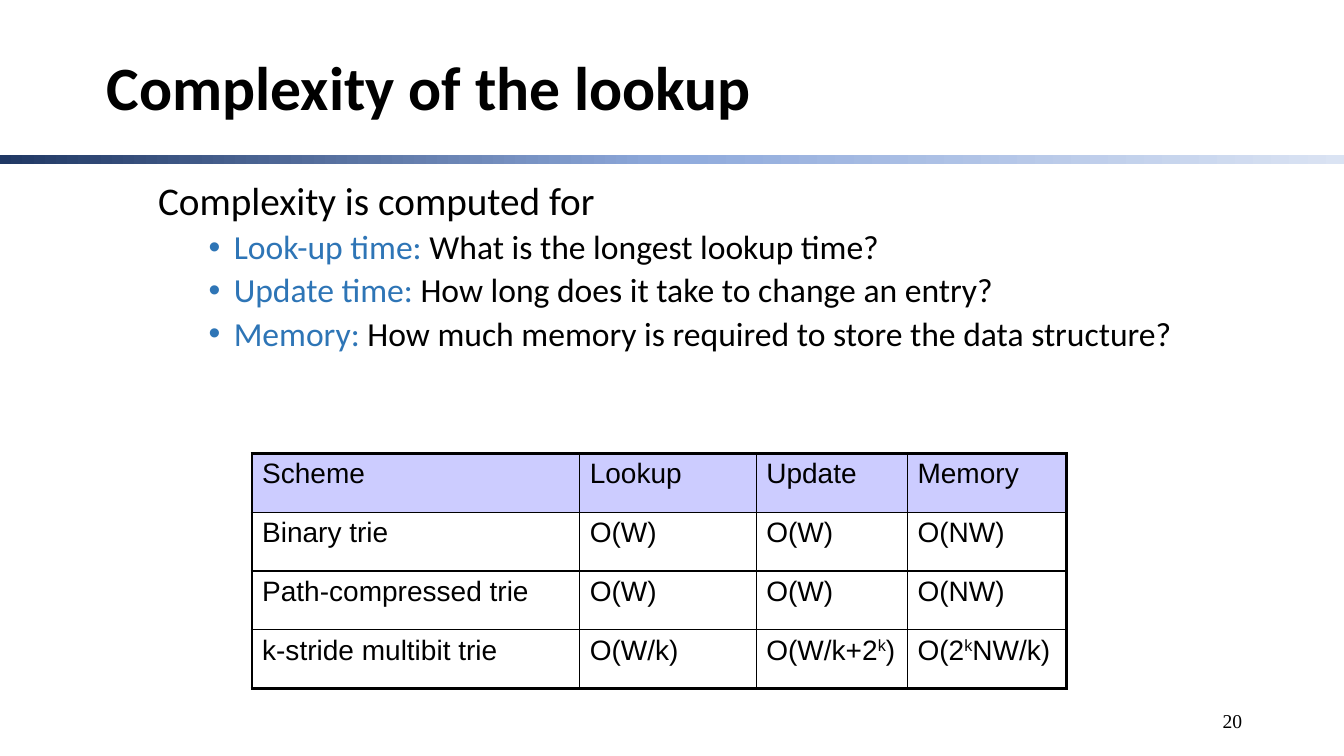
from lxml import etree
from pptx import Presentation
from pptx.dml.color import RGBColor
from pptx.enum.shapes import MSO_SHAPE
from pptx.enum.text import MSO_ANCHOR, MSO_AUTO_SIZE, PP_ALIGN
from pptx.oxml.ns import qn
from pptx.util import Inches, Pt

RECTANGLE = MSO_SHAPE.RECTANGLE
TOP, MIDDLE = MSO_ANCHOR.TOP, MSO_ANCHOR.MIDDLE
LEFT, RIGHT = PP_ALIGN.LEFT, PP_ALIGN.RIGHT
NO_AUTOFIT = MSO_AUTO_SIZE.NONE

TITLE = "Complexity of the lookup"
INTRO = "Complexity is computed for"
QUESTIONS = [
    ("Look-up time: ", "What is the longest lookup time?"),
    ("Update time: ", "How long does it take to change an entry?"),
    ("Memory: ", "How much memory is required to store the data structure?"),
]
SCHEMES = [
    ["Scheme", "Lookup", "Update", "Memory"],
    ["Binary trie", "O(W)", "O(W)", "O(NW)"],
    ["Path-compressed trie", "O(W)", "O(W)", "O(NW)"],
    ["k-stride multibit trie", "O(W/k)", "O(W/k+2^k^)", "O(2^k^NW/k)"],
]
COLUMN_WIDTHS = [3.25, 1.75, 1.5, 1.58]
SLIDE_NUMBER = "20"

SLIDE_SIZE = (13.33, 7.5)
BAND_BOX = (0, 1.54, 13.33, 0.09)
TITLE_BOX = (0.96, 0.4, 9.83, 1)
BODY_BOX = (1.47, 1.75, 10.45, 2.75)
TABLE_BOX = (2.5, 4.5, sum(COLUMN_WIDTHS), 2.33)
NUMBER_BOX = (9.42, 6.95, 3, 0.4)


class Theme:
    black = "000000"
    label = "2E75B6"
    header = "CCCCFF"
    band = [(0, "203864"), (50, "8FAADC"), (100, "DAE3F3")]
    inner_line, outer_line = 1, 2.25
    title = {"name": "Calibri", "size": Pt(44), "bold": True}
    intro = {"name": "Calibri", "size": Pt(28)}
    question = {"name": "Calibri", "size": Pt(24)}
    cell = {"name": "Arial", "size": Pt(20)}
    number = {"name": "Times New Roman", "size": Pt(14)}


def set_attributes(target, values):
    for name, value in values.items():
        setattr(target, name, value)


def to_inches(box):
    return [Inches(length) for length in box]


def add_run(paragraph, text, font, color=Theme.black):
    run = paragraph.add_run()
    run.text = text
    set_attributes(run.font, font)
    run.font.color.rgb = RGBColor.from_string(color)
    return run


def format_frame(frame, anchor):
    set_attributes(frame, {"word_wrap": True, "auto_size": NO_AUTOFIT, "vertical_anchor": anchor})


def add_text_box(slide, box, anchor):
    frame = slide.shapes.add_textbox(*to_inches(box)).text_frame
    format_frame(frame, anchor)
    return frame


def add_band(slide):
    band = slide.shapes.add_shape(RECTANGLE, *to_inches(BAND_BOX))
    band.shadow.inherit = False
    band.line.fill.background()
    band.fill.gradient()
    band.fill.gradient_angle = 0
    stops = band.element.spPr.find(".//" + qn("a:gsLst"))
    for stop in list(stops):
        stops.remove(stop)
    for position, color in Theme.band:
        stop = etree.SubElement(stops, qn("a:gs"), pos=str(position * 1000))
        etree.SubElement(stop, qn("a:srgbClr"), val=color)


def add_title(slide):
    title = slide.shapes.title
    set_attributes(title, dict(zip(("left", "top", "width", "height"), to_inches(TITLE_BOX))))
    format_frame(title.text_frame, MIDDLE)
    paragraph = title.text_frame.paragraphs[0]
    set_attributes(paragraph, {"alignment": LEFT, "line_spacing": 0.9})
    add_run(paragraph, TITLE, Theme.title)


def add_bullet(paragraph):
    properties = paragraph._p.get_or_add_pPr()
    properties.set("marL", str(Inches(0.75)))
    properties.set("indent", str(Inches(-0.25)))
    etree.SubElement(properties, qn("a:buFont"), typeface="Arial")
    etree.SubElement(properties, qn("a:buChar"), char="•")


def add_body(slide):
    frame = add_text_box(slide, BODY_BOX, TOP)
    paragraph = frame.paragraphs[0]
    set_attributes(paragraph, {"line_spacing": 0.9, "space_before": Pt(10)})
    add_run(paragraph, INTRO, Theme.intro)
    for label, question in QUESTIONS:
        paragraph = frame.add_paragraph()
        set_attributes(paragraph, {"level": 1, "line_spacing": 0.9, "space_before": Pt(5)})
        add_bullet(paragraph)
        add_run(paragraph, label, Theme.question, Theme.label)
        add_run(paragraph, question, Theme.question)


def add_borders(cell, outer_sides):
    properties = cell._tc.get_or_add_tcPr()
    for side, is_outer in outer_sides.items():
        width = Theme.outer_line if is_outer else Theme.inner_line
        line = etree.SubElement(properties, qn("a:ln" + side), w=str(Pt(width)))
        fill = etree.SubElement(line, qn("a:solidFill"))
        etree.SubElement(fill, qn("a:srgbClr"), val=Theme.black)


def add_scheme_table(slide):
    last_row, last_column = len(SCHEMES) - 1, len(COLUMN_WIDTHS) - 1
    frame = slide.shapes.add_table(len(SCHEMES), len(COLUMN_WIDTHS), *to_inches(TABLE_BOX))
    table = frame.table
    set_attributes(table, {"first_row": False, "horz_banding": False})
    for column, width in zip(table.columns, COLUMN_WIDTHS):
        column.width = Inches(width)
    for row_index, row in enumerate(SCHEMES):
        for column_index, text in enumerate(row):
            cell = table.cell(row_index, column_index)
            add_borders(cell, {
                "L": column_index == 0,
                "R": column_index == last_column,
                "T": row_index == 0,
                "B": row_index == last_row,
            })
            if row_index == 0:
                cell.fill.solid()
                cell.fill.fore_color.rgb = RGBColor.from_string(Theme.header)
            else:
                cell.fill.background()
            for part_index, part in enumerate(text.split("^")):
                run = add_run(cell.text_frame.paragraphs[0], part, Theme.cell)
                if part_index % 2:
                    run._r.get_or_add_rPr().set("baseline", "30000")


def add_slide_number(slide):
    paragraph = add_text_box(slide, NUMBER_BOX, MIDDLE).paragraphs[0]
    paragraph.alignment = RIGHT
    add_run(paragraph, SLIDE_NUMBER, Theme.number)


def main():
    presentation = Presentation()
    presentation.slide_width, presentation.slide_height = to_inches(SLIDE_SIZE)
    slide = presentation.slides.add_slide(presentation.slide_layouts[5])
    add_band(slide)
    add_slide_number(slide)
    add_title(slide)
    add_body(slide)
    add_scheme_table(slide)
    presentation.save("out.pptx")


if __name__ == "__main__":
    main()
